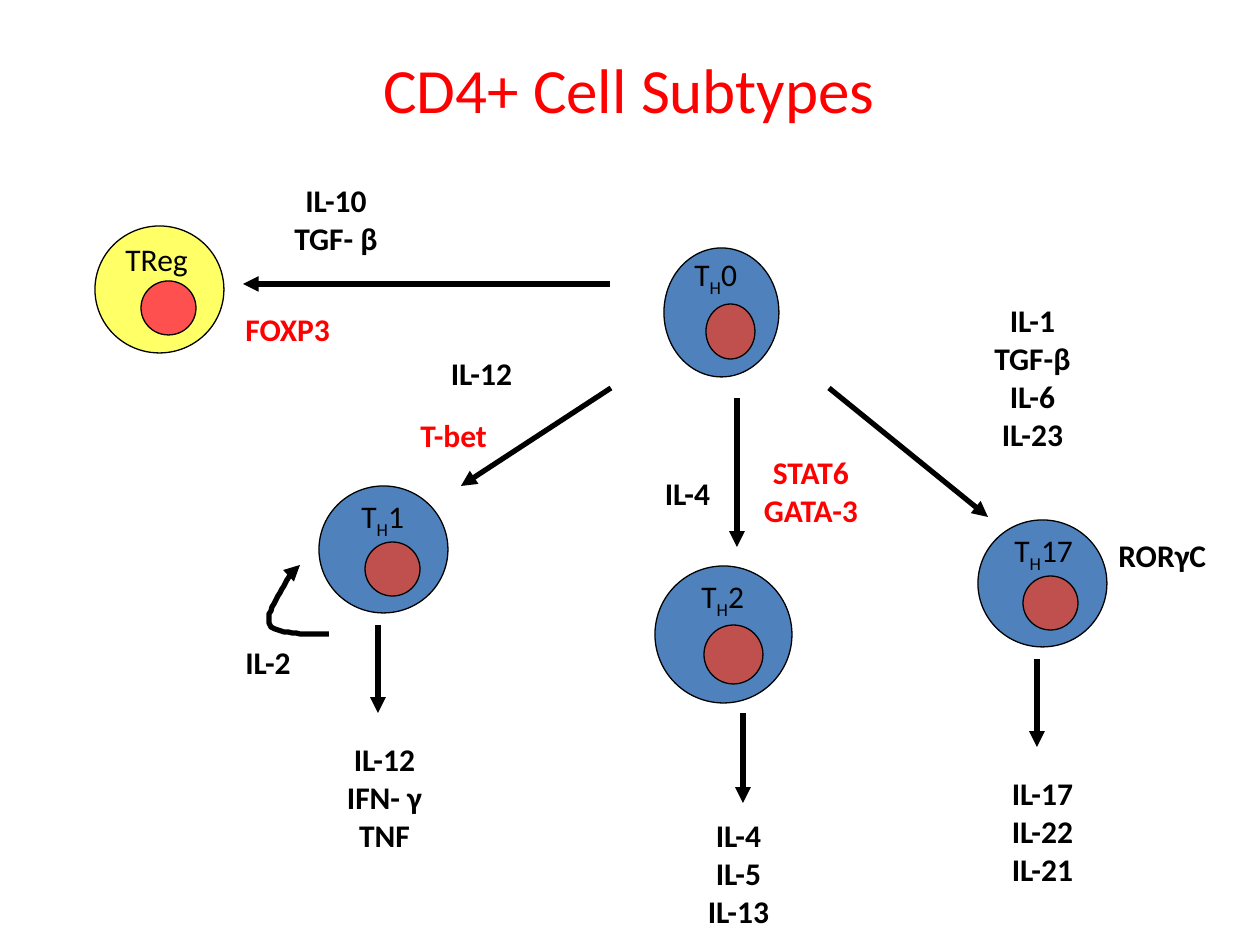
from lxml import etree
from pptx import Presentation
from pptx.dml.color import RGBColor
from pptx.enum.shapes import MSO_CONNECTOR, MSO_SHAPE
from pptx.enum.text import MSO_ANCHOR, MSO_AUTO_SIZE, PP_ALIGN
from pptx.oxml.ns import qn
from pptx.util import Pt

STRAIGHT = MSO_CONNECTOR.STRAIGHT
OVAL = MSO_SHAPE.OVAL
MIDDLE = MSO_ANCHOR.MIDDLE
GROW = MSO_AUTO_SIZE.SHAPE_TO_FIT_TEXT
LEFT = PP_ALIGN.LEFT
CENTER = PP_ALIGN.CENTER

BLACK = RGBColor(0x00, 0x00, 0x00)
RED = RGBColor(0xFF, 0x00, 0x00)
BLUE = RGBColor(0x4F, 0x81, 0xBD)
BRICK = RGBColor(0xC0, 0x50, 0x4D)
YELLOW = RGBColor(0xFF, 0xFF, 0x66)
CORAL = RGBColor(0xFF, 0x50, 0x50)

EMU_PER_PX = 914400 // 126
FONT = "Calibri"
LINE_HEIGHT = 38
CURVE_STEPS = 16


def px(length):
    return length * EMU_PER_PX


def bezier_points(start, first, second, end):
    points = []
    for step in range(1, CURVE_STEPS + 1):
        t = step / CURVE_STEPS
        weights = ((1 - t) ** 3, 3 * t * (1 - t) ** 2, 3 * t**2 * (1 - t), t**3)
        controls = (start, first, second, end)
        points.append(tuple(
            sum(weight * point[axis] for weight, point in zip(weights, controls))
            for axis in (0, 1)
        ))
    return points


class CellDiagram:
    def __init__(self, slide):
        self.slide = slide
        self.shapes = slide.shapes

    def add_run(self, paragraph, text, size, color, bold=False, subscript=False):
        run = paragraph.add_run()
        run.text = text
        run.font.name = FONT
        run.font.size = Pt(size)
        run.font.bold = bold
        run.font.color.rgb = color
        if subscript:
            run._r.get_or_add_rPr().set("baseline", "-24000")

    def add_title(self, text, left, top, width, height):
        frame = self.shapes.add_textbox(px(left), px(top), px(width), px(height)).text_frame
        frame.word_wrap = True
        frame.vertical_anchor = MIDDLE
        paragraph = frame.paragraphs[0]
        paragraph.alignment = CENTER
        paragraph.line_spacing = 1.1
        self.add_run(paragraph, text, 36, RED)

    def add_frame(self, left, top, width, line_count):
        height = 12 + LINE_HEIGHT * line_count
        frame = self.shapes.add_textbox(px(left), px(top), px(width), px(height)).text_frame
        frame.word_wrap = False
        frame.auto_size = GROW
        return frame

    def add_label(self, lines, left, top, width, color=BLACK, alignment=CENTER):
        frame = self.add_frame(left, top, width, len(lines))
        for index, line in enumerate(lines):
            paragraph = frame.add_paragraph() if index else frame.paragraphs[0]
            paragraph.alignment = alignment
            self.add_run(paragraph, line, 18, color, bold=True)

    def add_oval(self, box, color):
        shape = self.shapes.add_shape(OVAL, *map(px, box))
        shape.shadow.inherit = False
        shape.fill.solid()
        shape.fill.fore_color.rgb = color
        shape.line.color.rgb = BLACK
        shape.line.width = Pt(0.75)

    def add_cell(self, body, nucleus, name, name_box, colors=(BLUE, BRICK)):
        for box, color in zip((body, nucleus), colors):
            self.add_oval(box, color)
        paragraph = self.add_frame(*name_box, 1).paragraphs[0]
        for index, part in enumerate(name):
            self.add_run(paragraph, part, 18, BLACK, subscript=index == 1)

    def style_arrow(self, shape):
        shape.line.color.rgb = BLACK
        shape.line.width = Pt(3)
        etree.SubElement(shape.line._get_or_add_ln(), qn("a:tailEnd"), type="triangle")

    def add_arrow(self, start, end):
        connector = self.shapes.add_connector(STRAIGHT, *map(px, start + end))
        self.style_arrow(connector)
        etree.SubElement(connector._element.spPr, qn("a:effectLst"))

    def add_curved_arrow(self, start, curves):
        points = []
        position = start
        for first, second, end in curves:
            points += bezier_points(position, first, second, end)
            position = end
        builder = self.shapes.build_freeform(*start, scale=EMU_PER_PX)
        builder.add_line_segments(points, close=False)
        shape = builder.convert_to_shape()
        shape.shadow.inherit = False
        shape.fill.background()
        self.style_arrow(shape)


CELLS = [
    ((664, 248, 115, 129), (706, 304, 49, 55), ("T", "H", "0"), (682, 249, 77)),
    ((319, 486, 129, 127), (365, 542, 55, 54), ("T", "H", "1"), (349, 491, 77)),
    ((655, 566, 137, 137), (704, 625, 59, 59), ("T", "H", "2"), (689, 571, 77)),
    ((978, 520, 129, 127), (1023, 576, 55, 54), ("T", "H", "17"), (1002, 525, 87)),
    ((95, 226, 129, 127), (141, 281, 55, 54), ("TReg",), (113, 234, 102), (YELLOW, CORAL)),
]

ARROWS = [
    ((611, 388), (461, 486)),
    ((737, 398), (737, 547)),
    ((829, 388), (988, 517)),
    ((610, 284), (243, 284)),
    ((378, 625), (378, 713)),
    ((743, 713), (743, 803)),
    ((1037, 659), (1037, 747)),
]

LABELS = [
    (("IL-4",), 651, 468, 73),
    (("IL-12",), 437, 348, 89),
    (("IL-12", "IFN- γ", "TNF"), 334, 734, 101),
    (("IL-4", "IL-5", "IL-13"), 694, 810, 89),
    (("IL-17", "IL-22", "IL-21"), 998, 768, 89),
    (("IL-1", "TGF-β", "IL-6", "IL-23"), 958, 295, 149),
    (("IL-10", "TGF- β"), 281, 175, 110),
    (("IL-2",), 233, 637, 73, BLACK, LEFT),
    (("RORγC",), 1106, 530, 113, BLACK, LEFT),
    (("STAT6", "GATA-3"), 740, 447, 142, RED),
    (("T-bet",), 408, 410, 102, RED, LEFT),
    (("FOXP3",), 233, 304, 129, RED, LEFT),
]

IL2_LOOP = [
    ((302, 634), (276, 634), (270, 625)),
    ((263, 615), (285, 585), (290, 575)),
    ((295, 565), (296, 565), (300, 565)),
]


def main():
    presentation = Presentation()
    presentation.slide_width = px(1260)
    presentation.slide_height = px(945)
    slide = presentation.slides.add_slide(presentation.slide_layouts[6])
    diagram = CellDiagram(slide)
    diagram.add_title("CD4+ Cell Subtypes", 62, 6, 1134, 158)
    for cell in CELLS:
        diagram.add_cell(*cell)
    for start, end in ARROWS:
        diagram.add_arrow(start, end)
    diagram.add_curved_arrow((329, 634), IL2_LOOP)
    for label in LABELS:
        diagram.add_label(*label)
    presentation.save("out.pptx")


if __name__ == "__main__":
    main()
